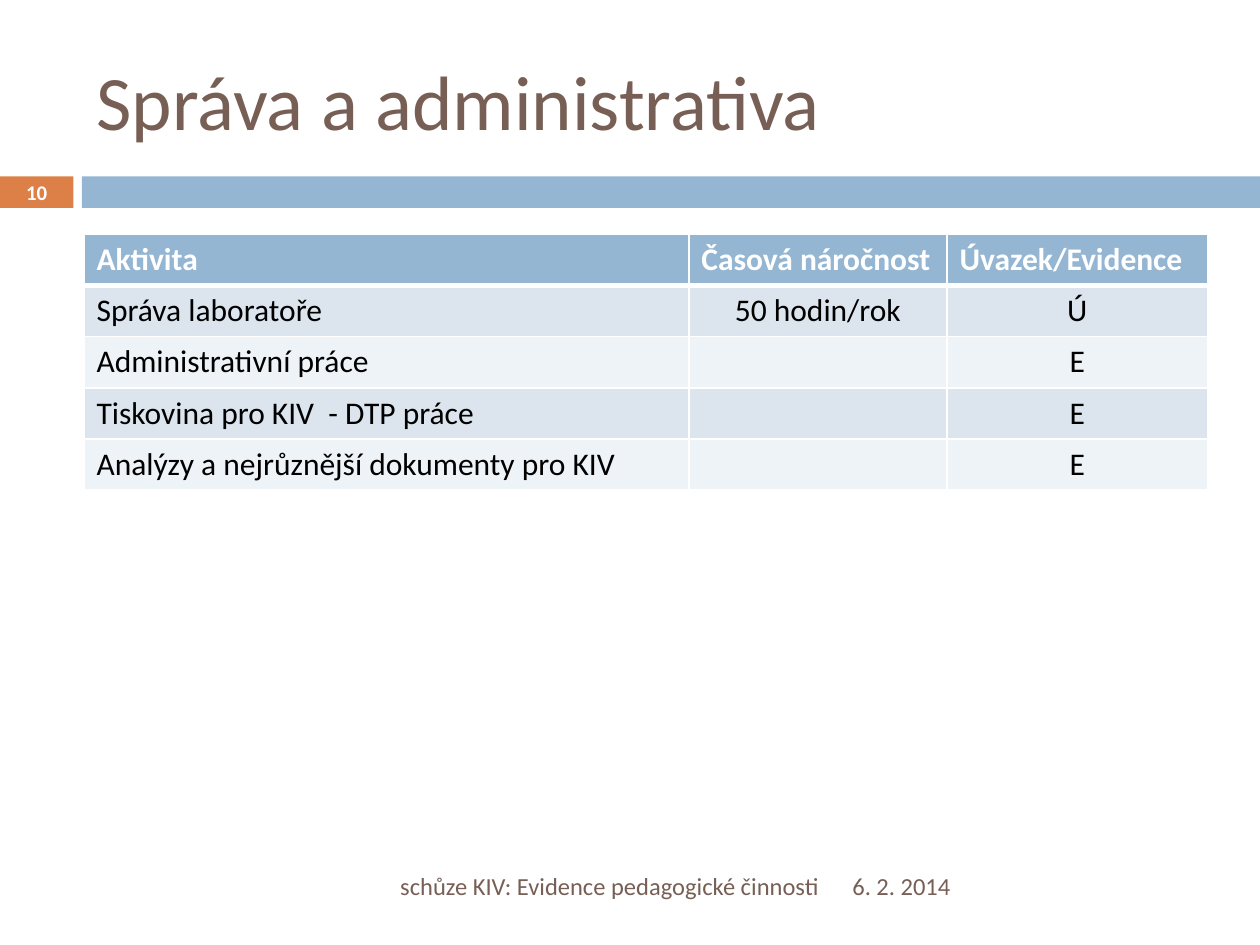
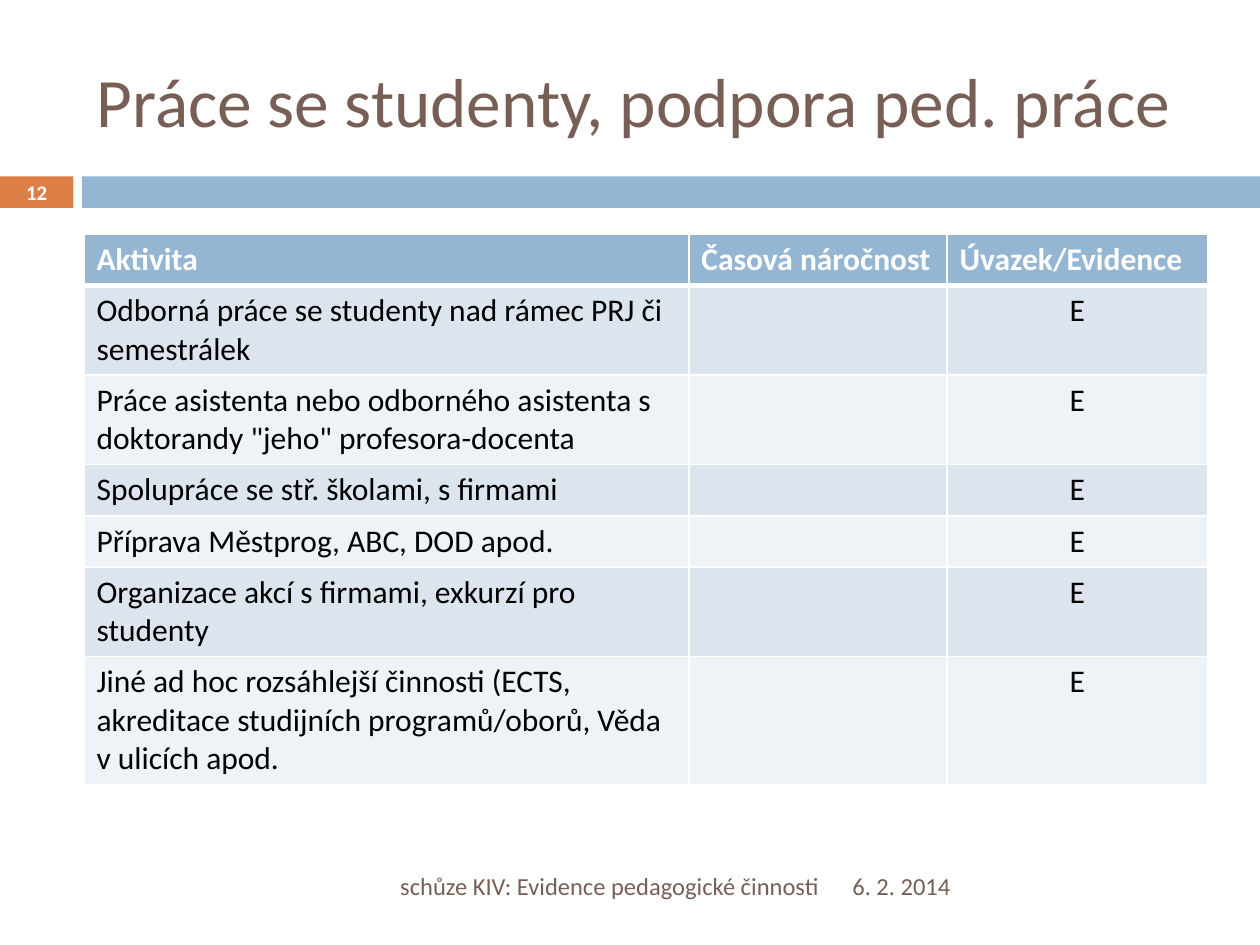
from dataclasses import dataclass

from lxml import etree
from pptx import Presentation
from pptx.dml.color import RGBColor
from pptx.enum import shapes, text
from pptx.oxml import ns
from pptx.util import Pt

FONT = "Calibri"
HUES = {
    "brown": "775F55",
    "orange": "DD8047",
    "blue": "94B6D2",
    "odd": "DCE5EE",
    "even": "EEF3F7",
    "white": "FFFFFF",
    "black": "000000",
}
LEFT, WIDTH = 48, 642
COLS = (345.6, 147.6, 148.8)
ROW = 29.2
HEADS = ("Aktivita", "Časová náročnost", "Úvazek/Evidence")
ALIGN = text.PP_ALIGN


@dataclass(frozen=True)
class Box:
    left: float
    top: float
    width: float
    height: float

    def place(self) -> tuple:
        return Pt(self.left), Pt(self.top), Pt(self.width), Pt(self.height)


@dataclass(frozen=True)
class Style:
    size: float
    hue: str
    bold: bool = False
    align: ALIGN = ALIGN.LEFT


@dataclass(frozen=True)
class Footer:
    box: Box
    words: str
    align: ALIGN


@dataclass(frozen=True)
class Page:
    number: int
    title: str
    size: float
    rows: tuple


TITLE = Box(LEFT, 18, WIDTH, 78)
BADGE = Box(0, 100.8, 42, 18)
BAND = Box(46.8, 100.8, 673.2, 18)
FOOTERS = (
    Footer(Box(480, 492, 210, 28.8), "6. 2. 2014", ALIGN.LEFT),
    Footer(Box(LEFT, 492, 427.2, 28.8),
           "schůze KIV: Evidence pedagogické činnosti", ALIGN.RIGHT),
)
PAGES = (
    Page(10, "Správa a administrativa", 44, (
        ("Správa laboratoře", "50 hodin/rok", "Ú"),
        ("Administrativní práce", "", "E"),
        ("Tiskovina pro KIV  - DTP práce", "", "E"),
        ("Analýzy a nejrůznější dokumenty pro KIV", "", "E"),
    )),
    Page(12, "Práce se studenty, podpora ped. práce", 39.6, (
        ("Odborná práce se studenty nad rámec PRJ či semestrálek", "", "E"),
        ("Práce asistenta nebo odborného asistenta s doktorandy \"jeho\" profesora-docenta", "", "E"),
        ("Spolupráce se stř. školami, s firmami", "", "E"),
        ("Příprava Městprog, ABC, DOD apod.", "", "E"),
        ("Organizace akcí s firmami, exkurzí pro studenty", "", "E"),
        ("Jiné ad hoc rozsáhlejší činnosti (ECTS, akreditace studijních programů/oborů, Věda v ulicích apod.", "", "E"),
    )),
)


def color(hue: str) -> RGBColor:
    return RGBColor.from_string(HUES[hue])


def write(frame, words: str, style: Style) -> None:
    frame.text = words
    for para in frame.paragraphs:
        para.alignment = style.align
        for run in para.runs:
            run.font.name = FONT
            run.font.size = Pt(style.size)
            run.font.bold = style.bold
            run.font.color.rgb = color(style.hue)


def set_frame(frame) -> None:
    frame.word_wrap = True
    frame.auto_size = text.MSO_AUTO_SIZE.NONE
    frame.vertical_anchor = text.MSO_ANCHOR.MIDDLE


def add_title(slide, page: Page) -> None:
    title = slide.shapes.title
    title.left, title.top, title.width, title.height = TITLE.place()
    set_frame(title.text_frame)
    write(title.text_frame, page.title, Style(page.size, "brown"))


def add_bar(slide, box: Box, hue: str):
    bar = slide.shapes.add_shape(shapes.MSO_SHAPE.RECTANGLE, *box.place())
    bar.shadow.inherit = False
    bar.fill.solid()
    bar.fill.fore_color.rgb = color(hue)
    bar.line.fill.background()
    return bar


def add_badge(slide, number: int) -> None:
    frame = add_bar(slide, BADGE, "orange").text_frame
    set_frame(frame)
    frame.margin_top = frame.margin_bottom = 0
    write(frame, str(number), Style(11.9, "white", True, ALIGN.CENTER))


def add_footer(slide, footer: Footer) -> None:
    frame = slide.shapes.add_textbox(*footer.box.place()).text_frame
    set_frame(frame)
    write(frame, footer.words, Style(14, "brown", align=footer.align))


def set_edges(cell, top: float, base: float) -> None:
    props = cell._tc.get_or_add_tcPr()
    edges = (("L", 1), ("R", 1), ("T", top), ("B", base))
    for spot, (side, width) in enumerate(edges):
        edge = etree.Element(ns.qn(f"a:ln{side}"), w=str(Pt(width)))
        fill = etree.SubElement(edge, ns.qn("a:solidFill"))
        etree.SubElement(fill, ns.qn("a:srgbClr"), val=HUES["white"])
        props.insert(spot, edge)


def add_grid(slide, rows: tuple) -> None:
    lines = (HEADS, *rows)
    box = Box(LEFT, 134, WIDTH, ROW * len(lines))
    table = slide.shapes.add_table(len(lines), len(COLS), *box.place()).table
    for col, width in zip(table.columns, COLS):
        col.width = Pt(width)
    for r, line in enumerate(lines):
        table.rows[r].height = Pt(ROW)
        head = r == 0
        fill = "blue" if head else "odd" if r % 2 else "even"
        for c, words in enumerate(line):
            cell = table.cell(r, c)
            align = ALIGN.LEFT if head or c == 0 else ALIGN.CENTER
            hue = "white" if head else "black"
            write(cell.text_frame, words, Style(18, hue, head, align))
            cell.fill.solid()
            cell.fill.fore_color.rgb = color(fill)
            set_edges(cell, 3 if r == 1 else 1, 3 if head else 1)


def add_page(deck, page: Page) -> None:
    slide = deck.slides.add_slide(deck.slide_layouts[5])
    add_badge(slide, page.number)
    add_bar(slide, BAND, "blue")
    add_title(slide, page)
    add_grid(slide, page.rows)
    for footer in FOOTERS:
        add_footer(slide, footer)


def main() -> None:
    deck = Presentation()
    deck.slide_width, deck.slide_height = Pt(720), Pt(540)
    for page in PAGES:
        add_page(deck, page)
    deck.save("out.pptx")


if __name__ == "__main__":
    main()
